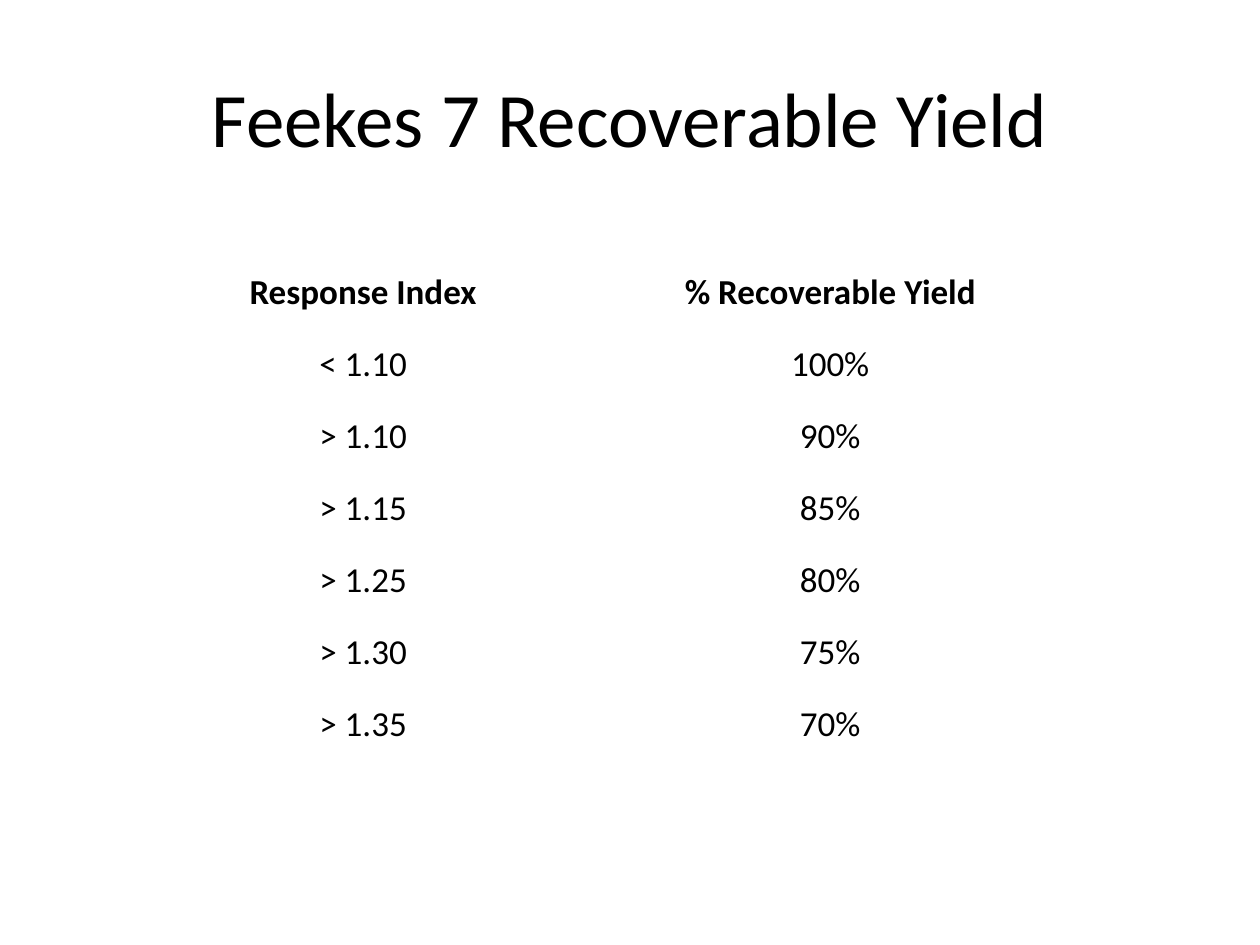
from pptx import Presentation
from pptx.dml.color import RGBColor
from pptx.enum.text import MSO_ANCHOR as Anchor, PP_ALIGN as Align
from pptx.util import Inches, Pt

BLACK = RGBColor(0x00, 0x00, 0x00)
FONT_NAME = "Calibri"
SLIDE_WIDTH, SLIDE_HEIGHT = Inches(10), Inches(7.5)

TITLE = "Feekes 7 Recoverable Yield"
TITLE_BOX = (0.05, 0.04, 0.9, 0.1667)
TABLE_BOX = (0.125, 0.256, 0.7416, 0.5333)
COLUMN_SHARES = (0.44, 0.56)
YIELD_ROWS = (
    ("Response Index", "% Recoverable Yield"),
    ("< 1.10", "100%"),
    ("> 1.10", "90%"),
    ("> 1.15", "85%"),
    ("> 1.25", "80%"),
    ("> 1.30", "75%"),
    ("> 1.35", "70%"),
)

TITLE_FONT = {"name": FONT_NAME, "size": Pt(44), "bold": False}
BODY_FONT = {"name": FONT_NAME, "size": Pt(20), "bold": False}
HEADER_FONT = {**BODY_FONT, "bold": True}
CELL_FORMAT = {
    "vertical_anchor": Anchor.BOTTOM,
    "margin_left": Inches(0.01),
    "margin_right": Inches(0.01),
    "margin_top": Inches(0.01),
    "margin_bottom": 0,
}


def to_lengths(box):
    """Turn shares of the slide into left, top, width and height."""
    sides = (SLIDE_WIDTH, SLIDE_HEIGHT, SLIDE_WIDTH, SLIDE_HEIGHT)
    return [round(share * side) for share, side in zip(box, sides)]


def apply_format(target, values):
    """Set each named attribute on the target."""
    for name, value in values.items():
        setattr(target, name, value)


def write_centred(text_frame, text, font_format):
    """Write one centred black paragraph."""
    paragraph = text_frame.paragraphs[0]
    paragraph.alignment = Align.CENTER
    run = paragraph.add_run()
    run.text = text
    apply_format(run.font, font_format)
    run.font.color.rgb = BLACK


def place_title(slide, box):
    """Place the title placeholder in the box."""
    title = slide.shapes.title
    names = ("left", "top", "width", "height")
    apply_format(title, dict(zip(names, to_lengths(box))))
    title.text_frame.vertical_anchor = Anchor.MIDDLE
    write_centred(title.text_frame, TITLE, TITLE_FONT)


def place_yield_table(slide, box):
    """Fill the box with the unshaded table of recoverable yields."""
    left, top, width, height = to_lengths(box)
    table = slide.shapes.add_table(
        len(YIELD_ROWS), len(COLUMN_SHARES), left, top, width, height
    ).table
    apply_format(table, {"first_row": False, "horz_banding": False})
    for column, share in zip(table.columns, COLUMN_SHARES):
        column.width = round(width * share)
    for row_index, (row, texts) in enumerate(zip(table.rows, YIELD_ROWS)):
        row.height = round(height / len(YIELD_ROWS))
        for cell, text in zip(row.cells, texts):
            cell.fill.background()
            apply_format(cell, CELL_FORMAT)
            font_format = BODY_FONT if row_index else HEADER_FONT
            write_centred(cell.text_frame, text, font_format)


def main():
    """Build and save the slide."""
    presentation = Presentation()
    presentation.slide_width = SLIDE_WIDTH
    presentation.slide_height = SLIDE_HEIGHT
    title_only = presentation.slide_layouts.get_by_name("Title Only")
    slide = presentation.slides.add_slide(title_only)
    place_title(slide, TITLE_BOX)
    place_yield_table(slide, TABLE_BOX)
    presentation.save("out.pptx")


if __name__ == "__main__":
    main()
